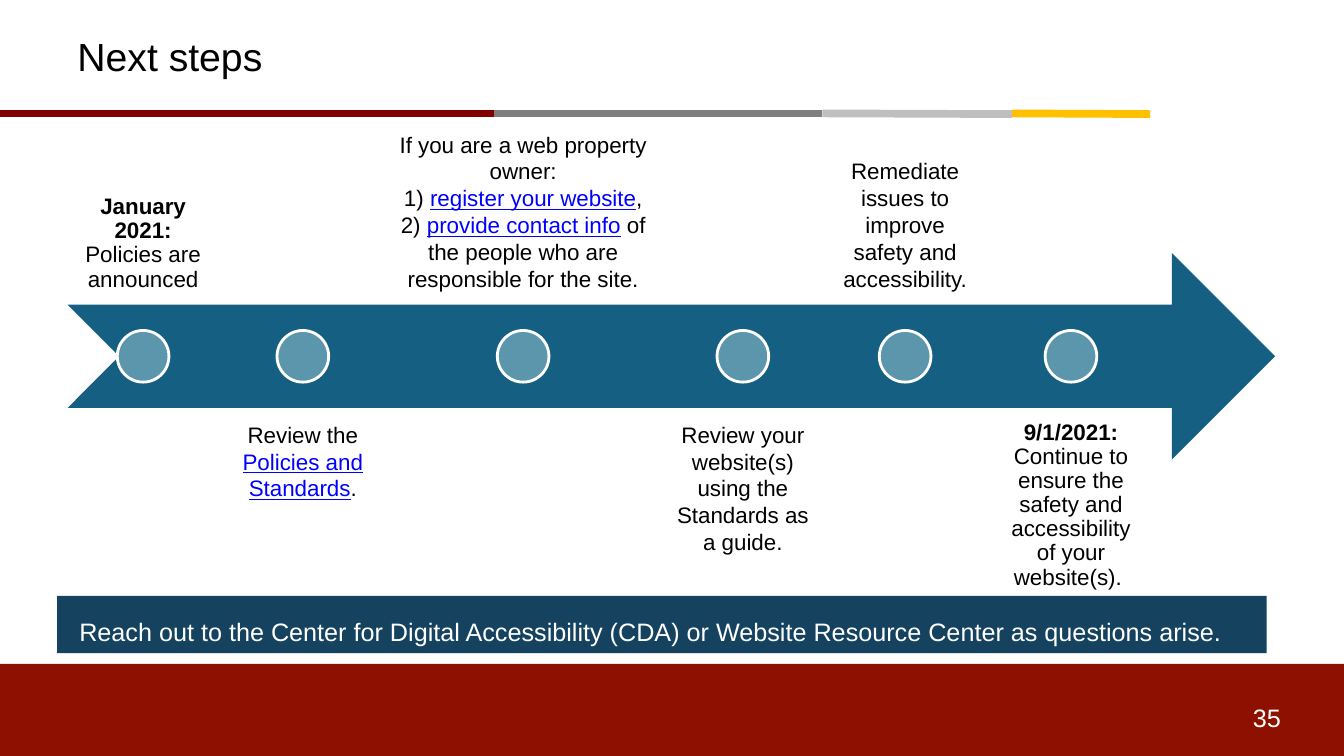
from dataclasses import dataclass
from lxml.etree import SubElement
from pptx import Presentation
from pptx.dml.color import RGBColor
from pptx.enum.shapes import MSO_CONNECTOR, MSO_SHAPE
from pptx.enum.text import MSO_ANCHOR, PP_ALIGN
from pptx.oxml.ns import qn
from pptx.util import Pt

LINK = "0000FF"
TOP, MID, BOTTOM = MSO_ANCHOR.TOP, MSO_ANCHOR.MIDDLE, MSO_ANCHOR.BOTTOM


@dataclass
class Run:
    text: str
    bold: bool = False
    link: bool = False


@dataclass
class Rule:
    x1: float
    x2: float
    color: str
    drop: float = 0


@dataclass
class Step:
    left: float
    width: float
    above: bool
    runs: list[Run]
    spacing: float = 1


def rgb(color: str) -> RGBColor:
    return RGBColor.from_string(color)


def add_rule(rule: Rule, y: float) -> None:
    line = s.shapes.add_connector(
        MSO_CONNECTOR.STRAIGHT, Pt(rule.x1), Pt(y), Pt(rule.x2), Pt(y + rule.drop))
    line.line.color.rgb = rgb(rule.color)
    line.line.width = Pt(5.5)
    SubElement(line._element.spPr, qn("a:effectLst"))


def add_shape(kind: MSO_SHAPE, x: float, y: float, w: float, h: float,
              fill: str, outline: str = ""):
    sp = s.shapes.add_shape(kind, Pt(x), Pt(y), Pt(w), Pt(h))
    sp.shadow.inherit = False
    sp.fill.solid()
    sp.fill.fore_color.rgb = rgb(fill)
    if outline:
        sp.line.color.rgb = rgb(outline)
        sp.line.width = Pt(2)
    else:
        sp.line.fill.background()
    return sp


def write(sp, runs: list[Run], size: float, color: str = "000000",
          align: PP_ALIGN = PP_ALIGN.LEFT, anchor: MSO_ANCHOR = TOP,
          inset: tuple[float, float] = (7.2, 3.6), spacing: float = 1) -> None:
    tf = sp.text_frame
    tf.word_wrap = True
    tf.vertical_anchor = anchor
    tf.margin_left = tf.margin_right = Pt(inset[0])
    tf.margin_top = tf.margin_bottom = Pt(inset[1])
    p = tf.paragraphs[0]
    p.alignment = align
    p.line_spacing = spacing
    p.font.size = Pt(size)
    p.font.name = "Arial"
    for run in runs:
        if run.text == "\n":
            p.add_line_break()
            continue
        r = p.add_run()
        r.text = run.text
        r.font.size = Pt(size)
        r.font.name = "Arial"
        r.font.bold = run.bold
        r.font.underline = run.link
        r.font.color.rgb = rgb(LINK if run.link else color)


def add_text(x: float, y: float, w: float, h: float, runs: list[Run],
             size: float, **style) -> None:
    write(s.shapes.add_textbox(Pt(x), Pt(y), Pt(w), Pt(h)), runs, size, **style)


BREAK = Run("\n")
RULES = [
    Rule(0, 353, "800000"),
    Rule(353, 587.5, "7F7F7F"),
    Rule(587.5, 723, "BFBFBF", 0.5),
    Rule(723, 821.5, "FFC000", 0.5),
]
STEPS = [
    Step(48.24, 108, True, [
        Run("January 2021:", bold=True), BREAK, Run("Policies are announced")], 0.9),
    Step(159.84, 113, False, [
        Run("Review the "), Run("Policies and Standards", link=True), Run(".")]),
    Step(275.76, 195.84, True, [
        Run("If you are a web property owner:"), BREAK,
        Run("1) "), Run("register your website", link=True),
        Run(", 2) "), Run("provide contact info", link=True),
        Run(" of the people who are responsible for the site.")]),
    Step(474.48, 112.32, False, [
        Run("Review your website(s) using the Standards as a guide.")]),
    Step(590.4, 112.32, True, [
        Run("Remediate issues to improve safety and accessibility.")]),
    Step(705.6, 118.8, False, [
        Run("9/1/2021:", bold=True), BREAK,
        Run("Continue to ensure the safety and accessibility of your website(s). ")], 0.9),
]
ARROW_TOP, BAND, DOT = 180.72, 147.6, 36.9
ABOVE_TOP, BELOW_TOP = 69.84, 291.6

prs = Presentation()
prs.slide_width, prs.slide_height = Pt(960), Pt(540)
s = prs.slides.add_slide(prs.slide_layouts[6])

# Footer, coloured rules and title
add_shape(MSO_SHAPE.RECTANGLE, 0, 474.3, 961, 69, "8E1000")
for rule in RULES:
    add_rule(rule, 81)
add_text(887.76, 498.24, 46, 28.8, [Run("35")], 18, color="FFFFFF")
add_text(48.24, 2.88, 161.28, 74.16, [Run("Next steps")], 28, anchor=MID)

# Timeline: each dot sits under the middle of its text
add_shape(MSO_SHAPE.NOTCHED_RIGHT_ARROW, 48.24, ARROW_TOP, 862.56, BAND, "155F83")
for step in STEPS:
    add_text(step.left, ABOVE_TOP if step.above else BELOW_TOP, step.width, BAND,
             step.runs, 16, align=PP_ALIGN.CENTER, inset=(8.96, 8.96),
             anchor=BOTTOM if step.above else TOP, spacing=step.spacing)
    add_shape(MSO_SHAPE.OVAL, step.left + (step.width - DOT) / 2,
              ARROW_TOP + (BAND - DOT) / 2, DOT, DOT, "5B96AD", "FFFFFF")

# Contact bar
bar = add_shape(MSO_SHAPE.RECTANGLE, 40.8, 425.6, 864, 41, "15435F")
write(bar, [Run("Reach out to the Center for Digital Accessibility (CDA) or "
                "Website Resource Center as questions arise.")],
      18, color="FFFFFF", inset=(15.84, 3.6), spacing=1.5)

prs.save("out.pptx")
